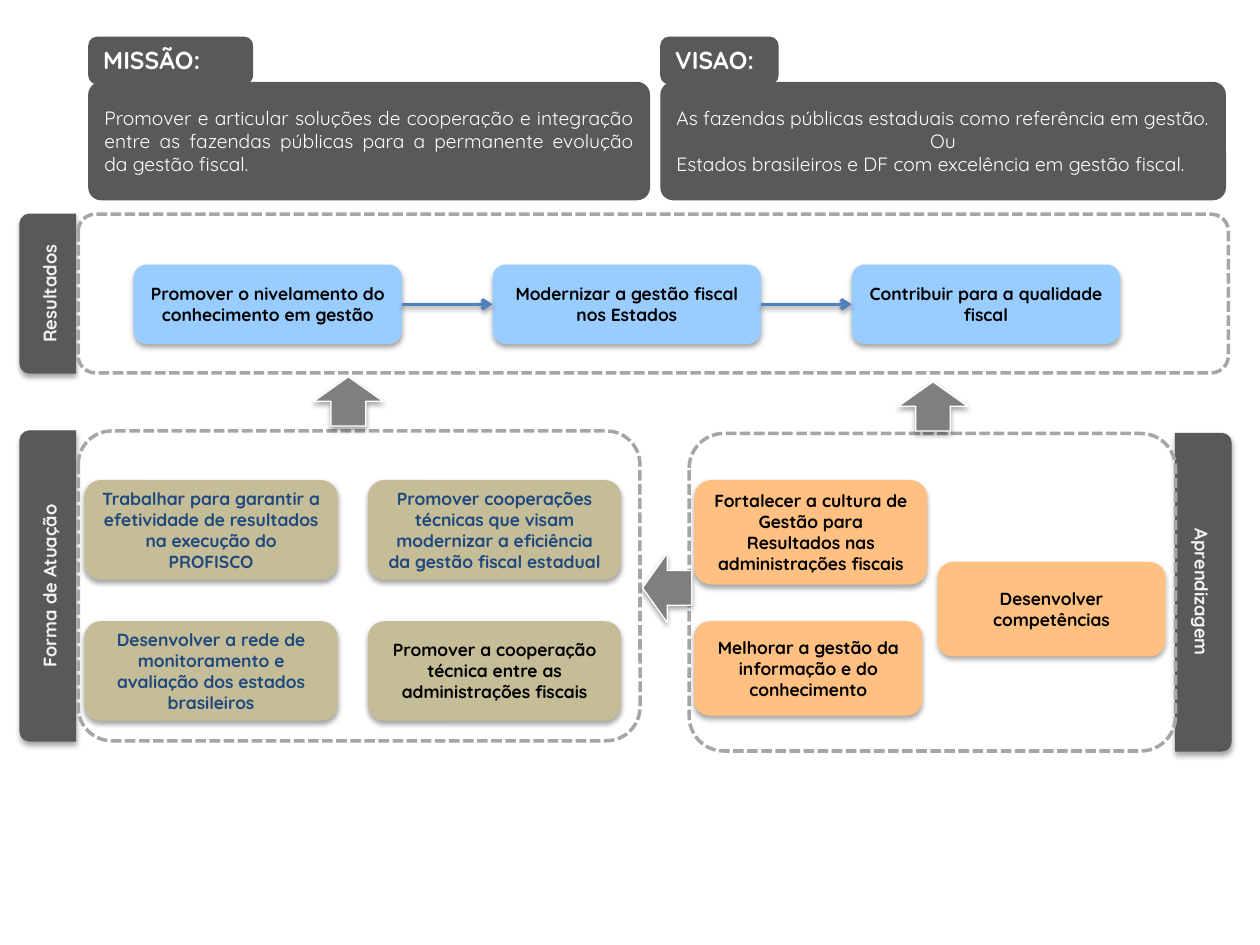
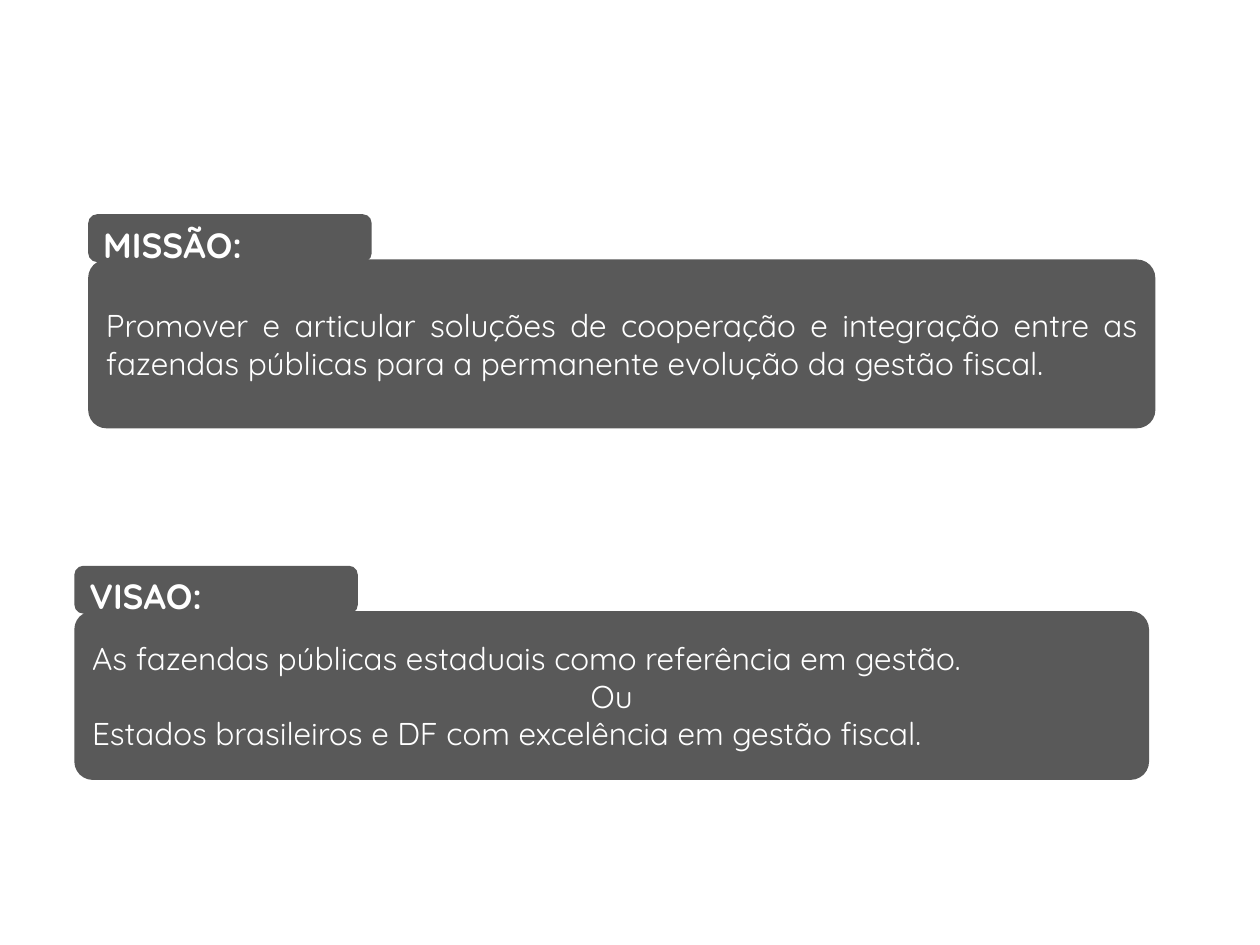
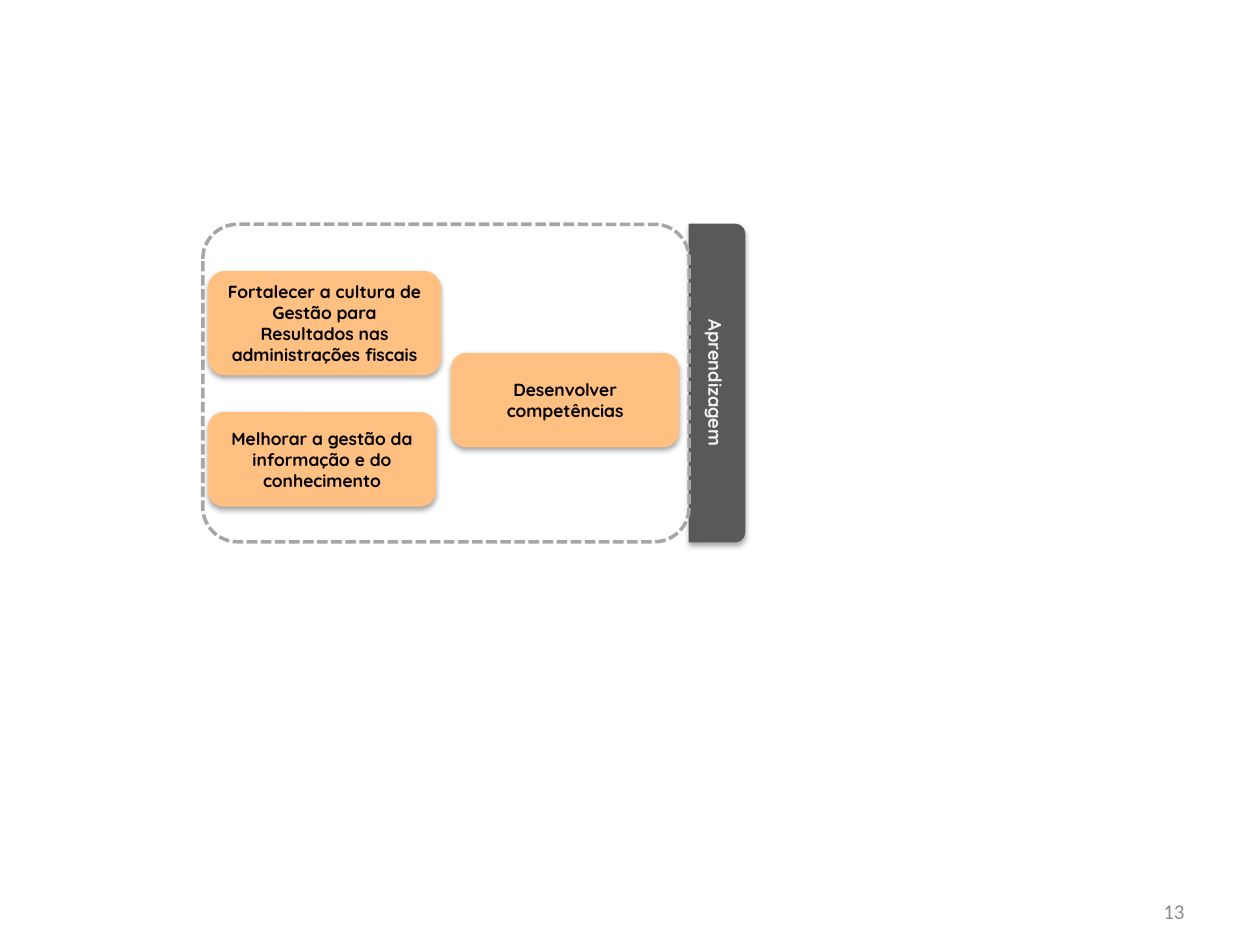
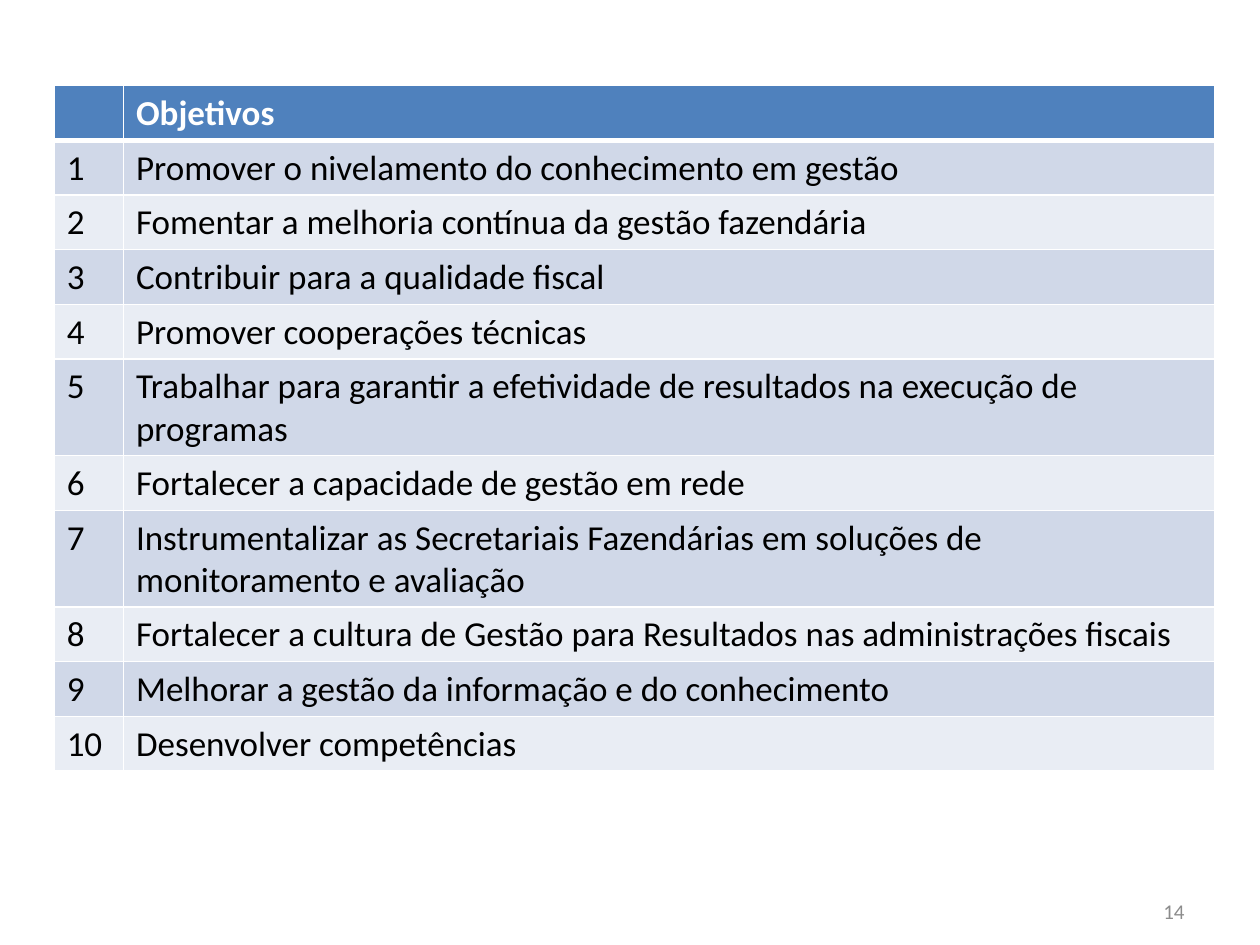
from lxml import etree
from pptx import Presentation
from pptx.dml.color import RGBColor
from pptx.enum.dml import MSO_LINE
from pptx.enum.shapes import MSO_CONNECTOR, MSO_SHAPE
from pptx.enum.text import MSO_ANCHOR, PP_ALIGN
from pptx.oxml.ns import qn
from pptx.util import Inches, Pt

ROUNDED = MSO_SHAPE.ROUNDED_RECTANGLE
TAB = MSO_SHAPE.ROUND_2_SAME_RECTANGLE
UP_ARROW = MSO_SHAPE.UP_ARROW
STRAIGHT = MSO_CONNECTOR.STRAIGHT
DASHED = MSO_LINE.SQUARE_DOT
LEFT, CENTER, RIGHT, JUSTIFY = PP_ALIGN.LEFT, PP_ALIGN.CENTER, PP_ALIGN.RIGHT, PP_ALIGN.JUSTIFY
TOP, MIDDLE = MSO_ANCHOR.TOP, MSO_ANCHOR.MIDDLE

WIDTH, HEIGHT = 10, 7.5
DISPLAY, BODY = "Quicksand", "Calibri"
WHITE, BLACK, NAVY = "FFFFFF", "000000", "1F497D"
DARK, PALE, DASH_GRAY, ARROW_GRAY, NUMBER_GRAY = "595959", "F2F2F2", "A6A6A6", "7F7F7F", "8C8C8C"
SKY, KHAKI, ORANGE, BLUE = "99CCFF", "C4BD97", "FFC081", "4F81BD"
BANDS = ("D0D8E8", "E9EDF4")
PANEL_CORNER, LABEL_CORNER = 0.109, 0.187
LABEL_HEIGHT, LABEL_STEP = 0.38, 0.36
TAB_WIDTH, TAB_OFFSET = 0.44, 0.46

MISSION = ("MISSÃO:", [
    ("Promover e articular soluções de cooperação e integração entre as fazendas públicas "
     "para a permanente evolução da gestão fiscal.", JUSTIFY)])
VISION = ("VISAO:", [
    ("As fazendas públicas estaduais como referência em gestão.", JUSTIFY),
    ("Ou", CENTER),
    ("Estados brasileiros e DF com excelência em gestão fiscal.", JUSTIFY)])

RESULTS = [
    "Promover o nivelamento do conhecimento em gestão",
    "Modernizar a gestão fiscal nos Estados",
    "Contribuir para a qualidade fiscal"]
ACTIONS = [
    ("Trabalhar para garantir a efetividade de resultados na execução do PROFISCO", NAVY),
    ("Promover cooperações técnicas que visam modernizar a eficiência da gestão fiscal estadual", NAVY),
    ("Desenvolver a rede de monitoramento e avaliação dos estados brasileiros", NAVY),
    ("Promover a cooperação técnica entre as administrações fiscais", BLACK)]
LEARNING = [
    ("Melhorar a gestão da informação e do conhecimento", (0.04, 1.49, 1.81, 0.75)),
    ("Fortalecer a cultura de Gestão para Resultados nas administrações fiscais", (0.04, 0.37, 1.85, 0.83)),
    ("Desenvolver competências", (1.97, 1.02, 1.81, 0.75))]
OBJECTIVES = [
    "Promover o nivelamento do conhecimento em gestão",
    "Fomentar a melhoria contínua da gestão fazendária",
    "Contribuir para a qualidade fiscal",
    "Promover cooperações técnicas",
    "Trabalhar para garantir a efetividade de resultados na execução de programas",
    "Fortalecer a capacidade de gestão em rede",
    "Instrumentalizar as Secretariais Fazendárias em soluções de monitoramento e avaliação",
    "Fortalecer a cultura de Gestão para Resultados nas administrações fiscais",
    "Melhorar a gestão da informação e do conhecimento",
    "Desenvolver competências"]


def rgb(color):
    return RGBColor.from_string(color)


def inches(*lengths):
    return [Inches(length) for length in lengths]


def write(frame, lines, size=10, color=BLACK, bold=False, font=DISPLAY, align=CENTER):
    if isinstance(lines, str):
        lines = [(lines, align)]
    for index, (text, alignment) in enumerate(lines):
        paragraph = frame.add_paragraph() if index else frame.paragraphs[0]
        paragraph.alignment = alignment
        run = paragraph.add_run()
        run.text = text
        run.font.size, run.font.bold, run.font.name = Pt(size), bold, font
        run.font.color.rgb = rgb(color)


def cast_shadow(properties, opacity, distance):
    effects = properties.find(qn("a:effectLst"))
    if effects is None:
        effects = etree.SubElement(properties, qn("a:effectLst"))
    outer = etree.SubElement(effects, qn("a:outerShdw"), blurRad=str(Pt(3.1)), dist=str(Pt(distance)),
                             dir="5400000", rotWithShape="0")
    tint = etree.SubElement(outer, qn("a:srgbClr"), val=BLACK)
    etree.SubElement(tint, qn("a:alpha"), val=str(opacity * 1000))


def draw(slide, preset, box, fill=None, line=None, weight=0.75, corner=None, turn=0,
         shadow=False, text=None, anchor=MIDDLE, **text_format):
    shape = slide.shapes.add_shape(preset, *inches(*box))
    shape.rotation = turn
    if corner:
        shape.adjustments[0] = corner
    if fill:
        shape.fill.solid()
        shape.fill.fore_color.rgb = rgb(fill)
    else:
        shape.fill.background()
    if line:
        shape.line.color.rgb = rgb(line)
        shape.line.width = Pt(weight)
    else:
        shape.line.fill.background()
    shape.shadow.inherit = False
    if shadow:
        cast_shadow(shape.element.spPr, 35, 1.8)
    if text:
        shape.text_frame.word_wrap = True
        shape.text_frame.vertical_anchor = anchor
        write(shape.text_frame, text, **text_format)
    return shape


def card(slide, box, fill, text, color=BLACK):
    draw(slide, ROUNDED, box, fill=fill, shadow=True, text=text, color=color, bold=True)


def statement(slide, content, left, top, label_width, width, height, label_size, size):
    label, lines = content
    draw(slide, ROUNDED, (left, top, label_width, LABEL_HEIGHT), fill=DARK, corner=LABEL_CORNER,
         text=label, anchor=TOP, size=label_size, color=WHITE, bold=True, align=JUSTIFY)
    draw(slide, ROUNDED, (left, top + LABEL_STEP, width, height), fill=DARK, corner=PANEL_CORNER,
         text=lines, size=size, color=WHITE)


def section(slide, title, box, tab_on_right=False):
    left, top, width, height = box
    tab_left = left + width if tab_on_right else left - TAB_OFFSET
    middle_x, middle_y = tab_left + TAB_WIDTH / 2, top + height / 2
    draw(slide, TAB, (middle_x - height / 2, middle_y - TAB_WIDTH / 2, height, TAB_WIDTH),
         fill=DARK, line=DARK, turn=90 if tab_on_right else 270, shadow=True,
         text=title, size=10.5, color=PALE, bold=True)
    draw(slide, ROUNDED, box, line=DASH_GRAY, weight=2, corner=PANEL_CORNER).line.dash_style = DASHED


def learning_section(slide, left, top):
    section(slide, "Aprendizagem", (left, top, 3.86, 2.52), tab_on_right=True)
    for text, (dx, dy, width, height) in LEARNING:
        card(slide, (left + dx, top + dy, width, height), ORANGE, text)


def link(slide, start, end, y):
    connector = slide.shapes.add_connector(STRAIGHT, *inches(start, y, end, y))
    connector.line.color.rgb = rgb(BLUE)
    connector.line.width = Pt(2)
    properties = connector.element.spPr
    etree.SubElement(properties.find(qn("a:ln")), qn("a:tailEnd"), type="arrow")
    cast_shadow(properties, 38, 1.6)


def page_number(slide, number):
    frame = slide.shapes.add_textbox(*inches(WIDTH - 2.83, HEIGHT - 0.47, 2.33, 0.4)).text_frame
    frame.word_wrap = True
    frame.vertical_anchor = MIDDLE
    write(frame, str(number), size=12, color=NUMBER_GRAY, font=BODY, align=RIGHT)


def style_cell(cell, fill, top, bottom):
    properties = cell._tc.get_or_add_tcPr()
    for side, weight in (("L", 1), ("R", 1), ("T", top), ("B", bottom)):
        border = etree.SubElement(properties, qn(f"a:ln{side}"), w=str(Pt(weight)))
        etree.SubElement(etree.SubElement(border, qn("a:solidFill")), qn("a:srgbClr"), val=WHITE)
    cell.fill.solid()
    cell.fill.fore_color.rgb = rgb(fill)


def map_slide(slide):
    statement(slide, MISSION, 0.7, 0.29, 1.31, 4.46, 0.94, 14, 11)
    statement(slide, VISION, 5.24, 0.29, 0.94, 4.49, 0.94, 14, 11)

    section(slide, "Resultados", (0.62, 1.7, 9.13, 1.26))
    left, top, width, height, step = 1.06, 2.1, 2.13, 0.63, 2.85
    for index, text in enumerate(RESULTS):
        x = left + index * step
        card(slide, (x, top, width, height), SKY, text)
        if index:
            link(slide, x - step + width, x, top + height / 2)

    section(slide, "Forma de Atuação", (0.62, 3.42, 4.46, 2.46))
    for index, (text, color) in enumerate(ACTIONS):
        row, column = divmod(index, 2)
        card(slide, (0.67 + column * 2.25, 3.81 + row * 1.12, 2.01, 0.79), KHAKI, text, color)

    learning_section(slide, 5.47, 3.44)
    for x, y, turn in ((2.49, 2.99, 0), (7.13, 3.03, 0), (5.02, 4.47, 270)):
        draw(slide, UP_ARROW, (x, y, 0.55, 0.39), fill=ARROW_GRAY, line=WHITE, turn=turn, shadow=True)


def statements_slide(slide):
    statement(slide, MISSION, 0.7, 1.7, 2.25, 8.47, 1.34, 20, 18)
    statement(slide, VISION, 0.59, 4.49, 2.25, 8.53, 1.34, 20, 18)


def learning_slide(slide):
    page_number(slide, 13)
    learning_section(slide, 1.61, 1.78)


def objectives_slide(slide):
    page_number(slide, 14)
    rows = [("", "Objetivos")] + [(str(n), text) for n, text in enumerate(OBJECTIVES, 1)]
    row_height, column_widths = 0.41, (0.55, 8.66)
    table = slide.shapes.add_table(len(rows), 2, *inches(0.43, 0.68, sum(column_widths),
                                                        row_height * len(rows))).table
    for column, width in zip(table.columns, column_widths):
        column.width = Inches(width)
    for r, row in enumerate(rows):
        table.rows[r].height = Inches(row_height)
        header = r == 0
        for c, text in enumerate(row):
            cell = table.cell(r, c)
            style_cell(cell, BLUE if header else BANDS[(r - 1) % 2],
                       top=3 if r == 1 else 1, bottom=3 if header else 1)
            if text:
                write(cell.text_frame, text, size=20, color=WHITE if header else BLACK,
                      bold=header, font=BODY, align=LEFT)


def main():
    deck = Presentation()
    deck.slide_width, deck.slide_height = inches(WIDTH, HEIGHT)
    for build in (map_slide, statements_slide, learning_slide, objectives_slide):
        build(deck.slides.add_slide(deck.slide_layouts[6]))
    deck.save("out.pptx")


if __name__ == "__main__":
    main()
